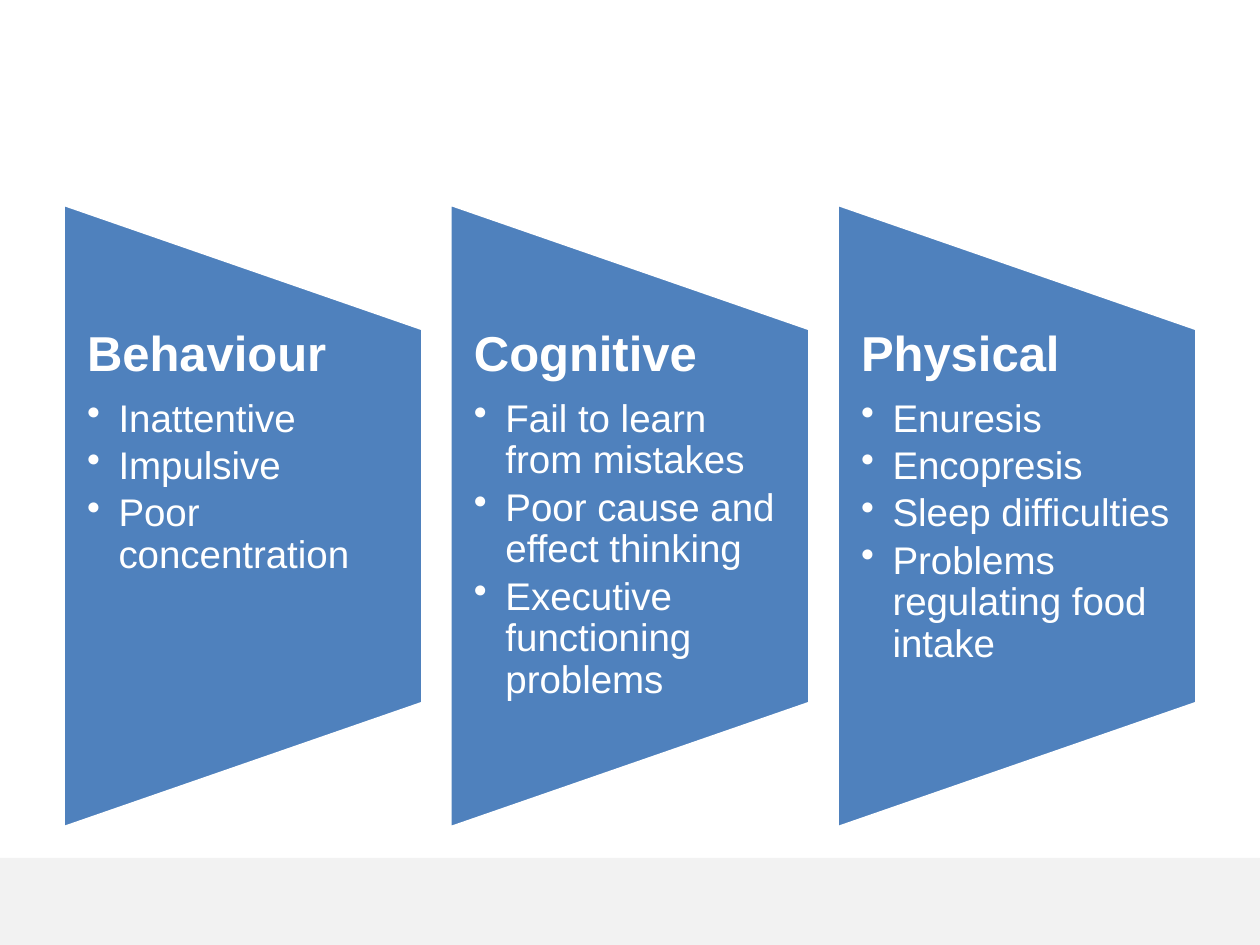
import pptx
import pptx.util
import pptx.dml.color
import pptx.enum.shapes
import pptx.enum.text
import lxml.etree
import pptx.oxml.ns

SCALE = 914400 / 126
KINDS = pptx.enum.shapes.MSO_SHAPE


def px(*nums):
    return [pptx.util.Emu(round(n * SCALE)) for n in nums]


def paint(item, color):
    item.solid() if hasattr(item, "solid") else None
    target = item.fore_color if hasattr(item, "solid") else item.color
    target.rgb = pptx.dml.color.RGBColor.from_string(color)


deck = pptx.Presentation()
deck.slide_width, deck.slide_height = px(1260, 945)
slide = deck.slides.add_slide(deck.slide_layouts[6])
shapes = slide.shapes
paint(slide.background.fill, "FFFFFF")

band = shapes.add_shape(KINDS.RECTANGLE, *px(0, 858, 1260, 87))
band.shadow.inherit = False
paint(band.fill, "F2F2F2")
band.line.fill.background()

lists = {
    "Behaviour": ["Inattentive", "Impulsive", "Poor concentration"],
    "Cognitive": [
        "Fail to learn from mistakes",
        "Poor cause and effect thinking",
        "Executive functioning problems",
    ],
    "Physical": [
        "Enuresis",
        "Encopresis",
        "Sleep difficulties",
        "Problems regulating food intake",
    ],
}
wide, tall, step, mid = 360, 624, 387, 516
left, top, right, base = px(24, 0, 25, 0)
frame = {
    "word_wrap": True,
    "vertical_anchor": pptx.enum.text.MSO_ANCHOR.TOP,
    "margin_left": left,
    "margin_top": top,
    "margin_right": right,
    "margin_bottom": base,
}
indent = pptx.util.Inches(0.25)

for col, (head, points) in enumerate(lists.items()):
    x = 63 + col * step
    panel = shapes.add_shape(
        KINDS.FLOWCHART_MANUAL_OPERATION,
        *px(x + (wide - tall) / 2, mid - wide / 2, tall, wide),
    )
    panel.rotation = 270
    panel.shadow.inherit = False
    paint(panel.fill, "4F81BD")
    paint(panel.line, "FFFFFF")
    panel.line.width = pptx.util.Pt(2)

    text = shapes.add_textbox(*px(x, 329, wide, 374)).text_frame
    for key, value in frame.items():
        setattr(text, key, value)
    for row, words in enumerate([head] + points):
        para = text.add_paragraph() if row else text.paragraphs[0]
        para.text = words
        para.line_spacing = 0.9
        para.space_after = pptx.util.Pt(3.3 if row else 9.8)
        if row:
            para.level = 1
            props = para._p.get_or_add_pPr()
            props.set("marL", str(indent))
            props.set("indent", str(-indent))
            mark = lxml.etree.SubElement(props, pptx.oxml.ns.qn("a:buChar"))
            mark.set("char", "•")
        look = {
            "name": "Arial",
            "size": pptx.util.Pt(22 if row else 28),
            "bold": row == 0,
        }
        font = para.runs[0].font
        for key, value in look.items():
            setattr(font, key, value)
        paint(font.fill, "FFFFFF")

deck.save("out.pptx")
